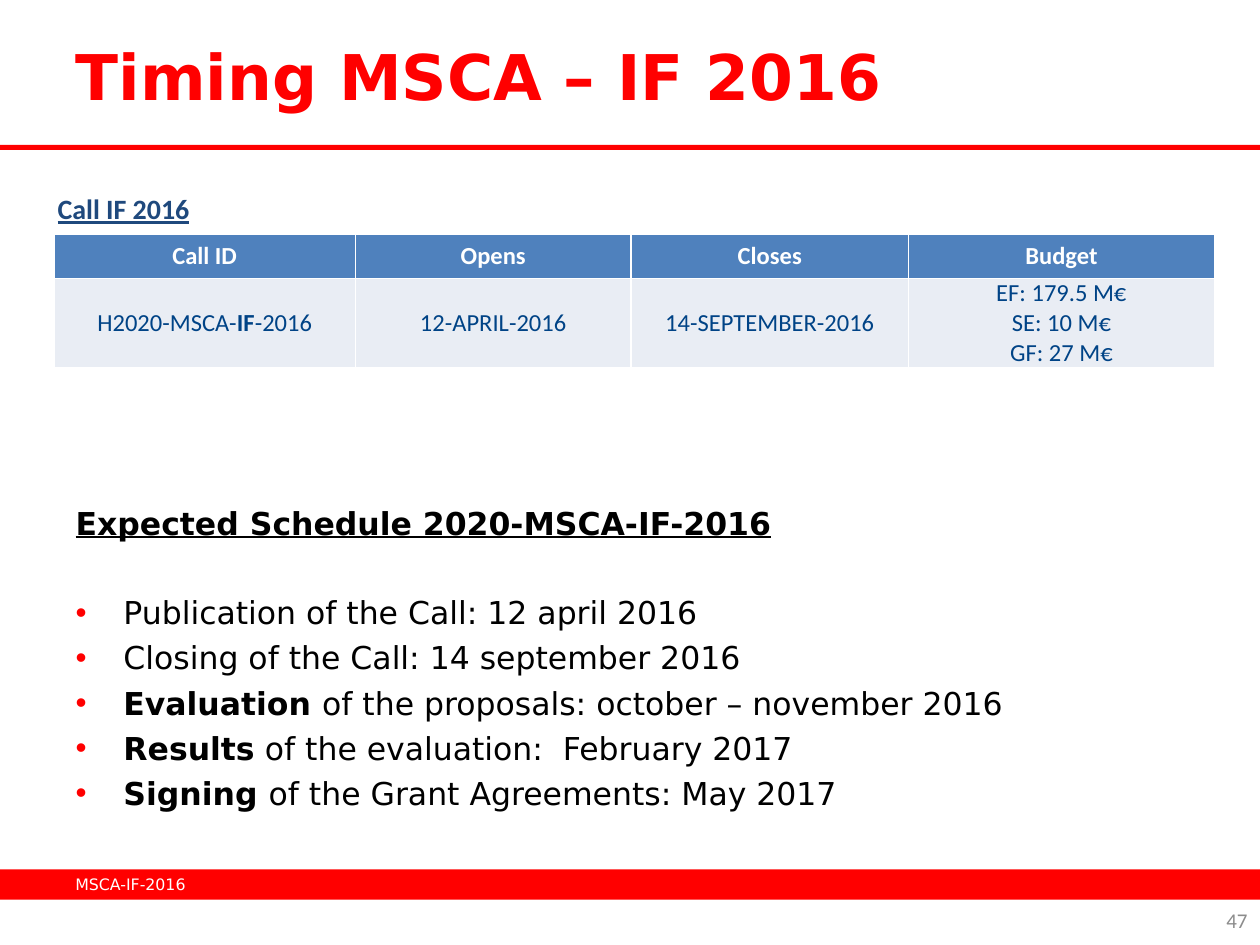
from lxml import etree
from pptx import Presentation
from pptx.dml.color import RGBColor
from pptx.enum.shapes import MSO_SHAPE as Shape
from pptx.enum.text import MSO_ANCHOR as Anchor, MSO_AUTO_SIZE as Auto, PP_ALIGN as Align
from pptx.oxml.ns import qn
from pptx.util import Inches, Pt

RED = RGBColor(0xFF, 0x00, 0x00)
WHITE = RGBColor(0xFF, 0xFF, 0xFF)
BLACK = RGBColor(0x00, 0x00, 0x00)
NAVY = RGBColor(0x1F, 0x49, 0x7D)
INK = RGBColor(0x00, 0x43, 0x86)
GREY = RGBColor(0x8C, 0x8C, 0x8C)
HEAD = RGBColor(0x4F, 0x81, 0xBD)
PALE = RGBColor(0xE9, 0xED, 0xF4)
SANS, CAL = "DejaVu Sans", "Calibri"

TITLE = "Timing MSCA – IF 2016"
# Text is a list of paragraphs; a paragraph is a list of (words, bold) runs.
CALLS = [
    [[[(name, True)]] for name in ("Call ID", "Opens", "Closes", "Budget")],
    [
        [[("H2020-MSCA-", False), ("IF", True), ("-2016", False)]],
        [[("12-APRIL-2016", False)]],
        [[("14-SEPTEMBER-2016", False)]],
        [[(part, False)] for part in ("EF: 179.5 M€", "SE: 10 M€", "GF: 27 M€")],
    ],
]
COLS, ROWS = (2.39, 2.19, 2.2, 2.43), (0.35, 0.71)
PLAN = "Expected Schedule 2020-MSCA-IF-2016"
STEPS = [
    [("Publication of the Call: 12 april 2016", False)],
    [("Closing of the Call: 14 september 2016", False)],
    [("Evaluation ", True), ("of the proposals: october – november 2016", False)],
    [("Results", True), (" of the evaluation:  February 2017", False)],
    [("Signing ", True), ("of the Grant Agreements: May 2017", False)],
]
BARS = [(6.9, 0.24), (1.15, 0.04)]  # top, height
LABELS = [  # place, words, size, font, colour, bold and underlined, align, anchor
    ((0.36, 1.47, 9.13, 2.28), "Call IF 2016", 16, CAL, NAVY, True, Align.LEFT, Anchor.TOP),
    ((7.67, 7.1, 2.33, 0.4), "47", 12, CAL, GREY, False, Align.RIGHT, Anchor.MIDDLE),
    ((0.5, 6.82, 2.33, 0.4), "MSCA-IF-2016", 9, SANS, WHITE, False, Align.LEFT, Anchor.MIDDLE),
]


def box(*sides):
    return [Inches(side) for side in sides]


def place(shape, *sides):
    shape.left, shape.top, shape.width, shape.height = box(*sides)


def write(frame, paras, size, font, color, align=Align.LEFT, line=False):
    """Fill a text frame run by run and return its paragraphs."""
    for i, runs in enumerate(paras):
        para = frame.paragraphs[0] if i == 0 else frame.add_paragraph()
        para.alignment = align
        para.space_before = Pt(0)
        for words, bold in runs:
            run = para.add_run()
            run.text = words
            run.font.size, run.font.name = Pt(size), font
            run.font.bold, run.font.underline = bold, line
            run.font.color.rgb = color
    return frame.paragraphs


def bullet(para, char=None):
    """Give the paragraph a red bullet with a hanging indent, or no bullet."""
    props = para._p.get_or_add_pPr()
    gap = Inches(0.38) if char else 0
    props.set("marL", str(gap))
    props.set("indent", str(-gap))
    if not char:
        etree.SubElement(props, qn("a:buNone"))
        return
    tint = etree.SubElement(props, qn("a:buClr"))
    etree.SubElement(tint, qn("a:srgbClr"), val=str(RED))
    etree.SubElement(props, qn("a:buFont"), typeface="Arial")
    etree.SubElement(props, qn("a:buChar"), char=char)


def border(cell):
    props = cell._tc.get_or_add_tcPr()
    for side in ("lnL", "lnR", "lnT", "lnB"):
        edge = etree.SubElement(props, qn(f"a:{side}"), w=str(Pt(1)))
        fill = etree.SubElement(edge, qn("a:solidFill"))
        etree.SubElement(fill, qn("a:srgbClr"), val=str(WHITE))


def add_calls(slide):
    frame = slide.shapes.add_table(
        len(ROWS), len(COLS), *box(0.43, 1.86, sum(COLS), sum(ROWS)))
    table = frame.table
    for col, width in zip(table.columns, COLS):
        col.width = Inches(width)
    for r, (row, high) in enumerate(zip(CALLS, ROWS)):
        table.rows[r].height = Inches(high)
        for c, paras in enumerate(row):
            cell = table.cell(r, c)
            cell.margin_left = cell.margin_right = Inches(0.07)
            cell.margin_top = cell.margin_bottom = 0
            cell.vertical_anchor = Anchor.MIDDLE
            border(cell)
            cell.fill.solid()
            cell.fill.fore_color.rgb = PALE if r else HEAD
            write(cell.text_frame, paras, 14, CAL, INK if r else WHITE, Align.CENTER)


def add_plan(body):
    place(body, 0.5, 3.59, 9, 3.11)
    frame = body.text_frame
    frame.auto_size = Auto.NONE
    frame.margin_top = Inches(0.41)
    head, *items = write(frame, [[(PLAN, True)], *STEPS], 18, SANS, BLACK)
    bullet(head)
    for run in head.runs:
        run.font.underline = True
    for i, item in enumerate(items):
        bullet(item, "•")
        item.space_before = Pt(4.2 if i else 29.4)


def main():
    deck = Presentation()
    deck.slide_width, deck.slide_height = box(10, 7.5)
    slide = deck.slides.add_slide(deck.slide_layouts[1])
    for top, high in BARS:
        bar = slide.shapes.add_shape(Shape.RECTANGLE, *box(0, top, 10, high))
        bar.shadow.inherit = False
        bar.fill.solid()
        bar.fill.fore_color.rgb = RED
        bar.line.fill.background()
    add_calls(slide)

    title = slide.shapes.title
    place(title, 0.5, 0.13, 9, 0.94)
    title.text_frame.auto_size = Auto.NONE
    title.text_frame.vertical_anchor = Anchor.MIDDLE
    write(title.text_frame, [[(TITLE, True)]], 36, SANS, RED)
    add_plan(slide.placeholders[1])

    for spot, words, size, font, color, strong, align, anchor in LABELS:
        frame = slide.shapes.add_textbox(*box(*spot)).text_frame
        frame.word_wrap = True
        frame.vertical_anchor = anchor
        write(frame, [[(words, strong)]], size, font, color, align, strong)
    deck.save("out.pptx")


if __name__ == "__main__":
    main()
